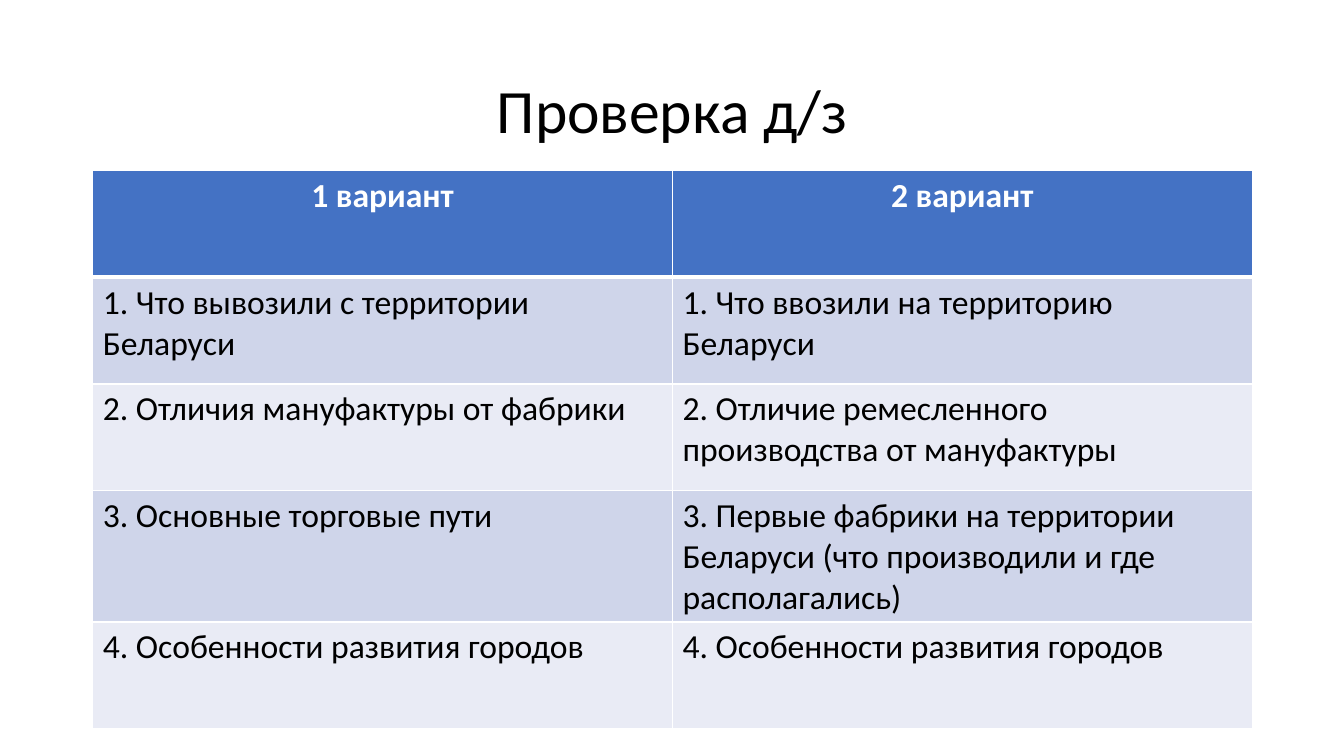
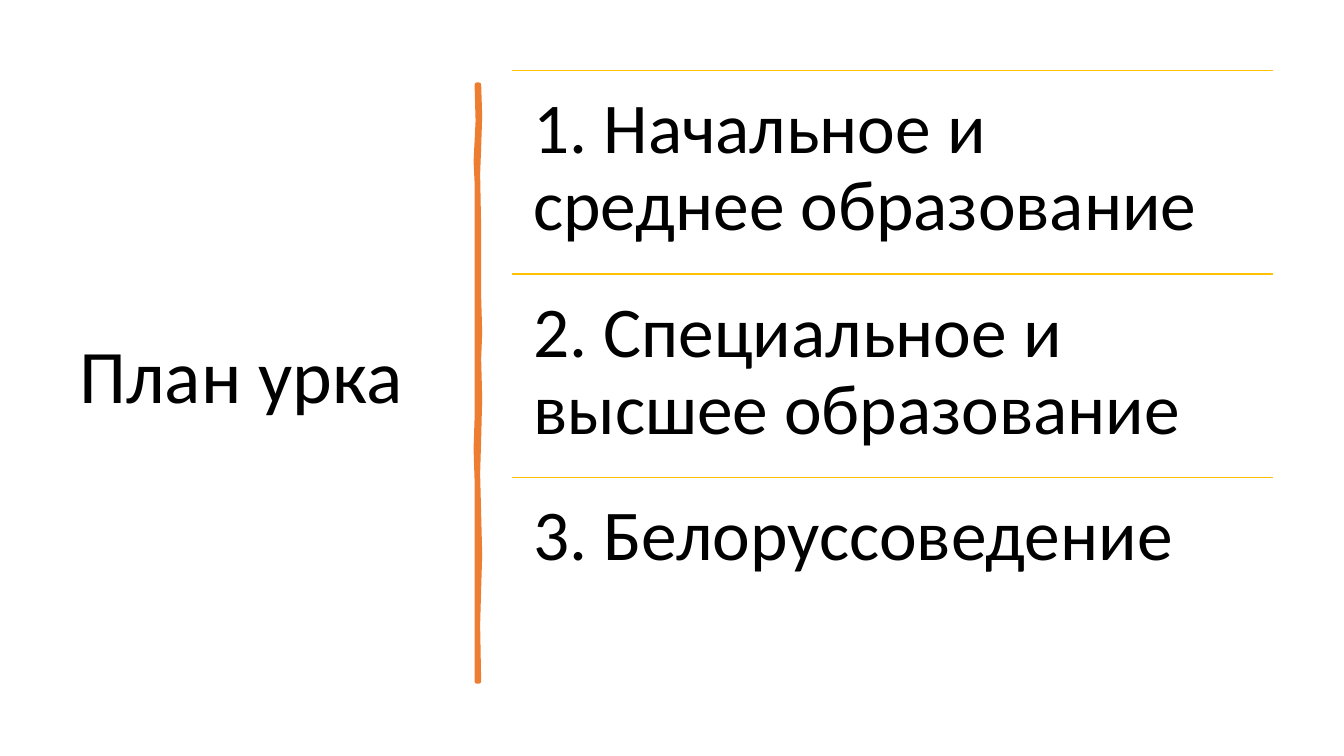
from lxml.etree import SubElement
from pptx import Presentation
from pptx.dml.color import RGBColor
from pptx.enum.shapes import MSO_CONNECTOR as Connector
from pptx.enum.text import MSO_ANCHOR as Anchor, PP_ALIGN as Align
from pptx.oxml.ns import qn
from pptx.util import Inches, Pt

FONT = "Calibri"
BLACK, WHITE = "000000", "FFFFFF"
BLUE, BANDS = "4472C4", ("CFD5EA", "E9EBF5")
ORANGE, GOLD = "ED7D31", "FFC000"

QUESTIONS = [
    ("1 вариант", "2 вариант"),
    ("1. Что вывозили с территории Беларуси",
     "1. Что ввозили на территорию Беларуси"),
    ("2. Отличия мануфактуры от фабрики",
     "2. Отличие ремесленного производства от мануфактуры"),
    ("3. Основные торговые пути",
     "3. Первые фабрики на территории Беларуси (что производили и где располагались)"),
    ("4. Особенности развития городов", "4. Особенности развития городов"),
]
PLAN = [
    "1. Начальное и среднее образование",
    "2. Специальное и высшее образование",
    "3. Белоруссоведение",
]
# Hand-drawn stroke: offsets from its top left corner, down one edge and up the other
STROKE_EDGES = [
    (0.03, 0), (0.04, 0.31), (0.03, 0.62), (0.02, 0.89), (0.03, 1.42),
    (0.03, 2.1), (0.04, 2.46), (0.03, 2.72), (0.04, 3.11), (0.03, 3.52),
    (0.02, 3.86), (0.03, 4.26), (0.04, 4.66), (0.03, 5), (0.02, 5.36),
    (0.03, 5.92), (0.01, 5.92), (0.01, 5.29), (0.01, 4.73), (0.01, 3.93),
    (0, 3.61), (0.01, 3.31), (0.01, 2.51), (0.01, 1.66), (0.01, 0.97),
    (0, 0.76), (0.02, 0.36), (0.01, 0),
]


def color(value):
    return RGBColor.from_string(value)


def write(frame, text, size, ink=BLACK, bold=False, **para_format):
    """Put one formatted paragraph into a text frame."""
    para = frame.paragraphs[0]
    for name, value in para_format.items():
        setattr(para, name, value)
    span = para.add_run()
    span.text = text
    for name, value in {"name": FONT, "size": Pt(size), "bold": bold}.items():
        setattr(span.font, name, value)
    span.font.color.rgb = color(ink)


def add_text(page, box, text, size, inset=None, anchor=Anchor.TOP, align=Align.LEFT):
    frame = page.shapes.add_textbox(*map(Inches, box)).text_frame
    settings = {"word_wrap": True, "vertical_anchor": anchor}
    if inset is not None:
        sides = ("left", "top", "right", "bottom")
        settings.update({f"margin_{side}": Inches(inset) for side in sides})
    for name, value in settings.items():
        setattr(frame, name, value)
    write(frame, text, size, alignment=align, line_spacing=0.9)


def add_title(page, box, text, size, align=Align.LEFT):
    add_text(page, box, text, size, anchor=Anchor.MIDDLE, align=align)


def add_borders(cell, bottom):
    """Draw white cell borders, 1 pt except for the given bottom width."""
    props = cell._tc.get_or_add_tcPr()
    for side, width in (("L", 1), ("R", 1), ("T", 1), ("B", bottom)):
        line = SubElement(props, qn(f"a:ln{side}"), w=str(Pt(width)))
        fill = SubElement(line, qn("a:solidFill"))
        SubElement(fill, qn("a:srgbClr"), val=WHITE)


def add_question_table(page, box, rows):
    table = page.shapes.add_table(len(rows), len(rows[0]), *map(Inches, box)).table
    for r, texts in enumerate(rows):
        header = r == 0
        for c, text in enumerate(texts):
            cell = table.cell(r, c)
            # The border under the header belongs to both rows it separates
            add_borders(cell, bottom=3 if header else 1)
            if r == 1:
                top = cell._tc.tcPr.find(qn("a:lnT"))
                top.set("w", str(Pt(3)))
            cell.fill.solid()
            cell.fill.fore_color.rgb = color(BLUE if header else BANDS[(r - 1) % 2])
            write(cell.text_frame, text, 24, WHITE if header else BLACK, header,
                  alignment=Align.CENTER if header else Align.LEFT)


def add_stroke(page, left, top):
    points = [(Inches(left + x), Inches(top + y)) for x, y in STROKE_EDGES]
    builder = page.shapes.build_freeform(*points[0])
    builder.add_line_segments(points[1:], close=True)
    stroke = builder.convert_to_shape()
    stroke.shadow.inherit = False
    stroke.fill.solid()
    stroke.fill.fore_color.rgb = color(ORANGE)
    stroke.line.color.rgb = color(ORANGE)
    stroke.line.width = Pt(3.25)
    SubElement(stroke.line._get_or_add_ln(), qn("a:round"))


def add_rule(page, left, top, width):
    ends = map(Inches, (left, top, left + width, top))
    rule = page.shapes.add_connector(Connector.STRAIGHT, *ends)
    rule.line.color.rgb = color(GOLD)
    rule.line.width = Pt(1)
    SubElement(rule._element.spPr, qn("a:effectLst"))


def add_plan(page, box, items):
    left, top, width, height = box
    step = height / len(items)
    for i, item in enumerate(items):
        y = top + i * step
        add_rule(page, left, y, width)
        add_text(page, (left, y, width, step), item, 51, inset=0.21)


def homework_slide(page):
    add_title(page, (0.92, 0.4, 11.5, 1.45), "Проверка д/з", 44, Align.CENTER)
    add_question_table(page, (0.92, 1.69, 11.5, 5.3), QUESTIONS)


def plan_slide(page):
    add_title(page, (0.69, 0.7, 3.74, 6.11), "План урка", 54)
    add_stroke(page, 4.72, 0.84)
    add_plan(page, (5.08, 0.7, 7.55, 6.06), PLAN)


def main():
    deck = Presentation()
    deck.slide_width, deck.slide_height = Inches(13.33), Inches(7.5)
    for build in (homework_slide, plan_slide):
        build(deck.slides.add_slide(deck.slide_layouts[6]))
    deck.save("out.pptx")


if __name__ == "__main__":
    main()
